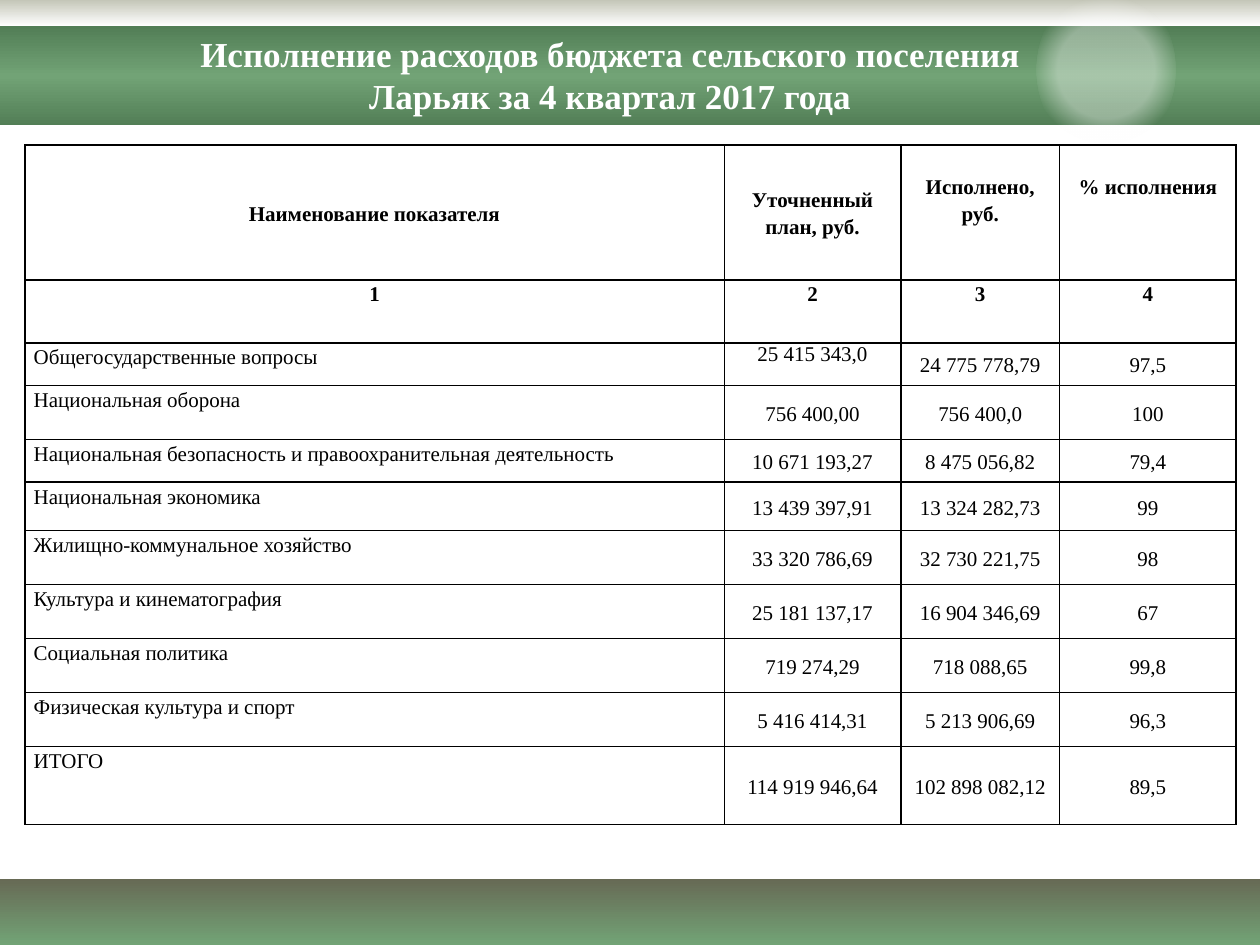
from lxml import etree
from pptx import Presentation
from pptx.dml.color import RGBColor
from pptx.enum import shapes, text
from pptx.oxml import ns
from pptx.util import Cm, Pt

FONT = "Times New Roman"
PAGE_WIDTH, PAGE_HEIGHT = 25.4, 19.05
COLUMN_WIDTHS = [14.1, 3.56, 3.2, 3.56]
ROW_HEIGHTS = [2.72, 1.27, 0.86, 1.09, 0.86, 0.97, 1.09, 1.09, 1.09, 1.09, 1.57]
HEADER_ROWS = 2
BUDGET = [
    ["Наименование показателя", "Уточненный план, руб.", "Исполнено,\nруб.", "% исполнения"],
    ["1", "2", "3", "4"],
    ["Общегосударственные вопросы", "25 415 343,0", "24 775 778,79", "97,5"],
    ["Национальная оборона", "756 400,00", "756 400,0", "100"],
    ["Национальная безопасность и правоохранительная деятельность",
     "10 671 193,27", "8 475 056,82", "79,4"],
    ["Национальная экономика", "13 439 397,91", "13 324 282,73", "99"],
    ["Жилищно-коммунальное хозяйство", "33 320 786,69", "32 730 221,75", "98"],
    ["Культура и кинематография", "25 181 137,17", "16 904 346,69", "67"],
    ["Социальная политика", "719 274,29", "718 088,65", "99,8"],
    ["Физическая культура и спорт", "5 416 414,31", "5 213 906,69", "96,3"],
    ["ИТОГО", "114 919 946,64", "102 898 082,12", "89,5"],
]


def color(value):
    return RGBColor.from_string(value)


def add_element(parent, tag, **attributes):
    return etree.SubElement(parent, ns.qn(tag), attributes)


def set_gradient(shape, stops, radial=False):
    """Fill with (percent, colour, opacity percent) stops."""
    shape.fill.background()
    placeholder = shape.element.spPr.find(ns.qn("a:noFill"))
    gradient = etree.Element(ns.qn("a:gradFill"), rotWithShape="1")
    stop_list = add_element(gradient, "a:gsLst")
    for position, value, opacity in stops:
        stop = add_element(stop_list, "a:gs", pos=str(position * 1000))
        paint = add_element(stop, "a:srgbClr", val=value)
        if opacity < 100:
            add_element(paint, "a:alpha", val=str(opacity * 1000))
    if radial:
        center = add_element(gradient, "a:path", path="circle")
        add_element(center, "a:fillToRect", l="50000", t="50000", r="50000", b="50000")
    else:
        add_element(gradient, "a:lin", ang="5400000", scaled="0")
    placeholder.getparent().replace(placeholder, gradient)


def add_gradient_shape(page, kind, left, top, width, height, stops, radial=False):
    shape = page.shapes.add_shape(kind, Cm(left), Cm(top), Cm(width), Cm(height))
    shape.shadow.inherit = False
    shape.line.fill.background()
    set_gradient(shape, stops, radial)


def add_band(page, top, height, *colors):
    step = 100 // (len(colors) - 1)
    stops = [(index * step, value, 100) for index, value in enumerate(colors)]
    add_gradient_shape(page, shapes.MSO_SHAPE.RECTANGLE, 0, top, PAGE_WIDTH, height, stops)


def style_paragraph(para, size, value, bold, align):
    para.alignment = align
    para.font.name = FONT
    para.font.size = Pt(size)
    para.font.bold = bold
    para.font.color.rgb = color(value)


def set_borders(cell, value, width):
    properties = cell._tc.get_or_add_tcPr()
    for index, side in enumerate("LRTB"):
        line = etree.Element(ns.qn(f"a:ln{side}"), w=str(Pt(width)))
        add_element(add_element(line, "a:solidFill"), "a:srgbClr", val=value)
        properties.insert(index, line)


def fill_cell(cell, content, row, column):
    header = row < HEADER_ROWS
    align = text.PP_ALIGN.CENTER if header or column else text.PP_ALIGN.LEFT
    first_plan = (row, column) == (2, 1)
    middle = column < 2 if row == 0 else not header and column > 0 and not first_plan
    cell.fill.background()
    set_borders(cell, "000000", 1)
    cell.vertical_anchor = text.MSO_ANCHOR.MIDDLE if middle else text.MSO_ANCHOR.TOP
    cell.margin_left = cell.margin_right = Cm(0.18)
    # The two right-hand headings start one line lower
    cell.margin_top = Cm(0.56 if row == 0 and column > 1 else 0)
    cell.margin_bottom = 0
    cell.text_frame.text = content
    for para in cell.text_frame.paragraphs:
        style_paragraph(para, 12, "000000", header, align)
        para.line_spacing = 1.0 if first_plan else 1.15


def add_budget_table(page):
    frame = page.shapes.add_table(
        len(BUDGET), len(COLUMN_WIDTHS), Cm(0.5), Cm(2.92),
        Cm(sum(COLUMN_WIDTHS)), Cm(sum(ROW_HEIGHTS)))
    table = frame.table
    table.first_row = table.horz_banding = False
    for column, width in zip(table.columns, COLUMN_WIDTHS):
        column.width = Cm(width)
    for row, height in zip(table.rows, ROW_HEIGHTS):
        row.height = Cm(height)
    for row, contents in enumerate(BUDGET):
        for column, content in enumerate(contents):
            fill_cell(table.cell(row, column), content, row, column)


def add_title(page, content):
    box = page.shapes.add_textbox(Cm(3.3), Cm(0.53), Cm(18), Cm(1.96))
    box.text_frame.word_wrap = True
    box.text_frame.text = content
    style_paragraph(box.text_frame.paragraphs[0], 20, "FFFFFF", True, text.PP_ALIGN.CENTER)


def main():
    deck = Presentation()
    deck.slide_width, deck.slide_height = Cm(PAGE_WIDTH), Cm(PAGE_HEIGHT)
    page = deck.slides.add_slide(deck.slide_layouts[6])

    # Background bands and the light spot
    add_band(page, 17.72, 1.33, "676A55", "72A376")
    add_band(page, 0, 0.53, "C4C6B8", "FFFFFF")
    add_band(page, 0.53, 2, "527E56", "72A376", "527E56")
    add_gradient_shape(page, shapes.MSO_SHAPE.OVAL, 20.9, -0.28, 2.8, 3.4,
                       [(44, "FFFFFF", 38), (67, "FFFFFF", 0)], radial=True)

    # Content
    add_budget_table(page)
    add_title(page, "Исполнение расходов бюджета сельского поселения "
                    "Ларьяк за 4 квартал 2017 года")
    deck.save("out.pptx")


if __name__ == "__main__":
    main()
